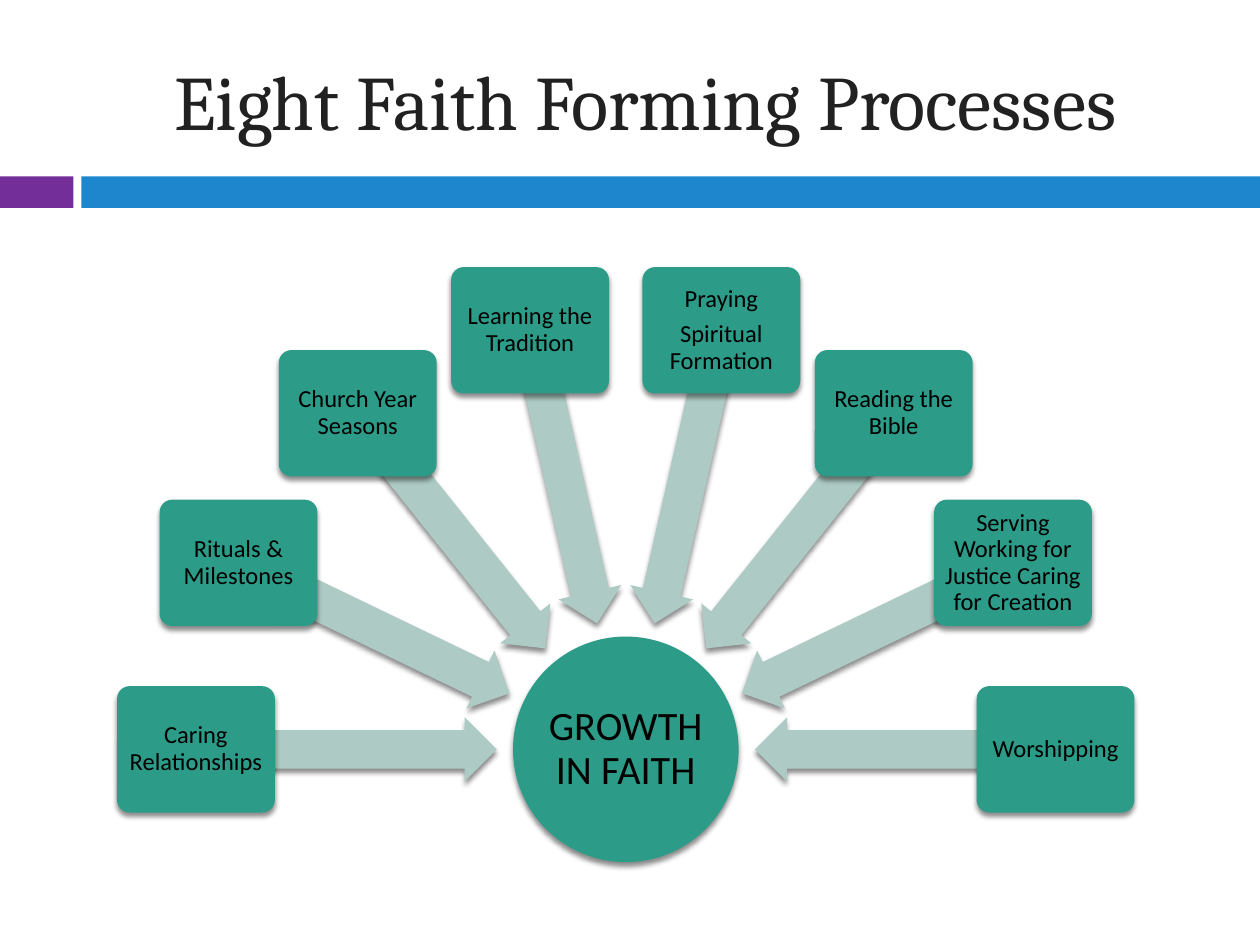
from math import cos, radians, sin

from lxml.etree import SubElement
from pptx import Presentation
from pptx.dml.color import RGBColor
from pptx.enum.shapes import MSO_SHAPE
from pptx.enum.text import MSO_ANCHOR, PP_ALIGN
from pptx.oxml.ns import qn
from pptx.util import Pt

COLORS = {"purple": "732E9A", "blue": "1D86CD", "teal": "2C9C89",
          "pale": "ADCBC4", "black": "000000", "title": "212121"}

PROCESSES = [
    "Caring Relationships",
    "Rituals & Milestones",
    "Church Year Seasons",
    "Learning the Tradition",
    "Praying\nSpiritual Formation",
    "Reading the Bible",
    "Serving Working for Justice Caring for Creation",
    "Worshipping",
]


def add_block(kind, x, y, w, h, color, shadow=True):
    """Add a filled shape without outline, centred on x, y."""
    sp = s.shapes.add_shape(kind, Pt(x - w / 2), Pt(y - h / 2), Pt(w), Pt(h))
    sp.fill.solid()
    sp.fill.fore_color.rgb = RGBColor.from_string(COLORS[color])
    sp.line.fill.background()
    sp.shadow.inherit = False
    if shadow:
        effects = sp._element.spPr.find(qn("a:effectLst"))
        outer = SubElement(effects, qn("a:outerShdw"), blurRad=str(Pt(3)),
                           dist=str(Pt(2.4)), dir="5400000", rotWithShape="0")
        black = SubElement(outer, qn("a:srgbClr"), val=COLORS["black"])
        SubElement(black, qn("a:alpha"), val="45000")
    return sp


def set_text(sp, text, size, font="Calibri", color="black", inset=None,
             line_spacing=None, space_after=None):
    tf = sp.text_frame
    tf.text = text
    tf.word_wrap = True
    tf.vertical_anchor = MSO_ANCHOR.MIDDLE
    if inset is not None:
        tf.margin_left = tf.margin_right = Pt(inset)
        tf.margin_top = tf.margin_bottom = Pt(inset)
    for p in tf.paragraphs:
        p.alignment = PP_ALIGN.CENTER
        if line_spacing:
            p.line_spacing = line_spacing
        if space_after:
            p.space_after = Pt(space_after)
        for r in p.runs:
            r.font.size = Pt(size)
            r.font.name = font
            r.font.color.rgb = RGBColor.from_string(COLORS[color])


prs = Presentation()
prs.slide_width, prs.slide_height = Pt(720), Pt(540)
s = prs.slides.add_slide(prs.slide_layouts[5])

# Title and the band below it
title = s.shapes.title
title.left, title.top, title.width, title.height = Pt(48), Pt(18), Pt(642), Pt(78)
set_text(title, "Eight Faith Forming Processes", 44, font="Cambria", color="title")
for left, right, color in [(0, 42, "purple"), (46.5, 720, "blue")]:
    add_block(MSO_SHAPE.RECTANGLE, (left + right) / 2, 109.8, right - left, 18,
              color, shadow=False)

# Hub, with the processes spread evenly over the half circle above it
CX, CY = 357.6, 428.2
BOX_RADIUS, ARROW_RADIUS = 245.6, 159.5

hub = add_block(MSO_SHAPE.OVAL, CX, CY, 128.9, 128.9, "teal")
set_text(hub, "GROWTH IN FAITH", 23, inset=1.4, line_spacing=0.9, space_after=8)

for i, process in enumerate(PROCESSES):
    angle = 180 + 180 * i / (len(PROCESSES) - 1)
    dx, dy = cos(radians(angle)), sin(radians(angle))

    arrow = add_block(MSO_SHAPE.LEFT_ARROW, CX + ARROW_RADIUS * dx,
                      CY + ARROW_RADIUS * dy, 171.4, 36.7, "pale")
    arrow.adjustments[0], arrow.adjustments[1] = 0.6, 0.5
    arrow.rotation = angle % 360

    box = add_block(MSO_SHAPE.ROUNDED_RECTANGLE, CX + BOX_RADIUS * dx,
                    CY + BOX_RADIUS * dy, 90.2, 72.2, "teal")
    box.adjustments[0] = 0.1
    set_text(box, process, 14, inset=2.1, line_spacing=0.9, space_after=4.9)

prs.save("out.pptx")
